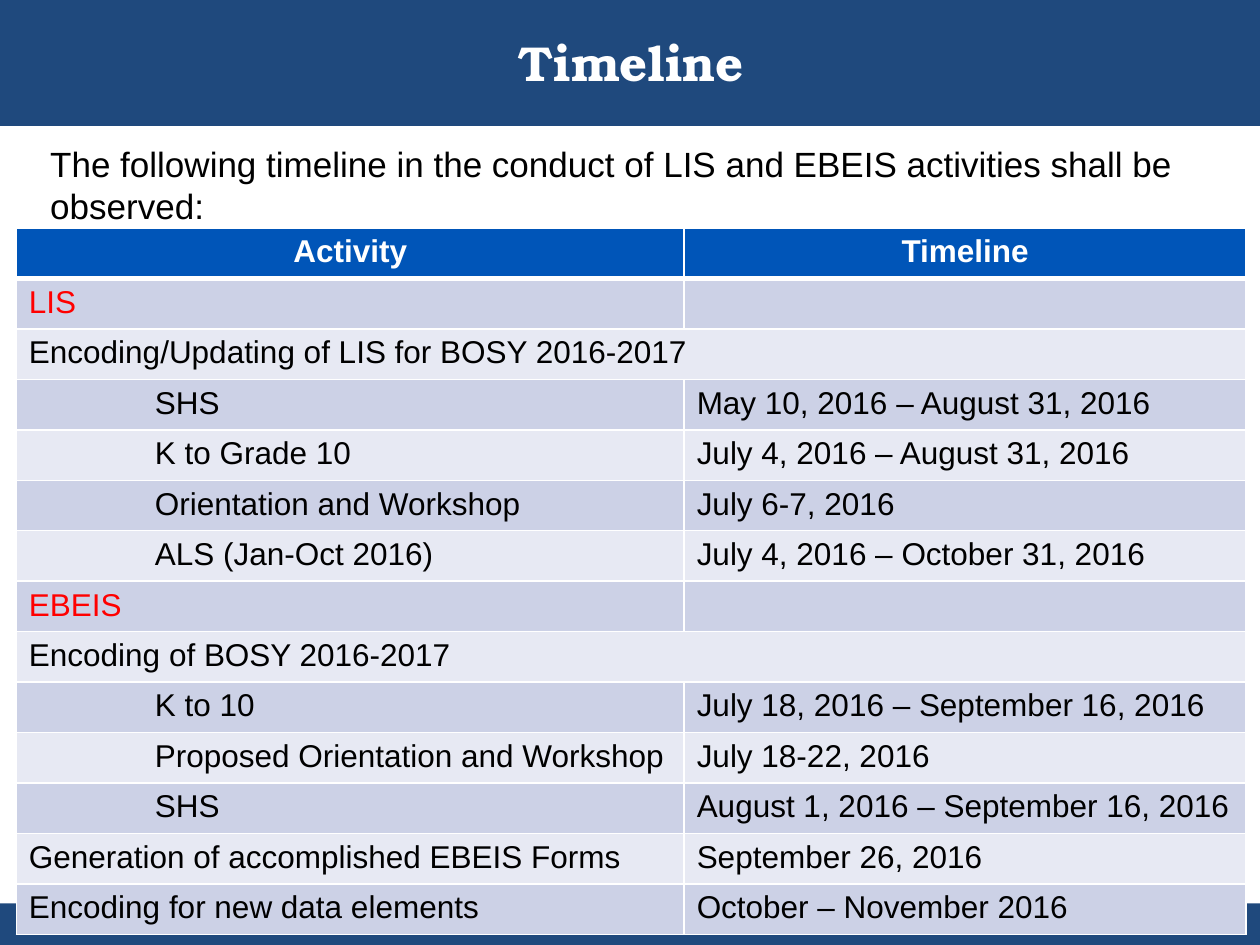
from lxml import etree
from pptx import Presentation
from pptx.dml.color import RGBColor
from pptx.enum.shapes import MSO_SHAPE
from pptx.enum.text import MSO_ANCHOR, PP_ALIGN
from pptx.oxml.ns import qn
from pptx.util import Inches, Pt

RECTANGLE = MSO_SHAPE.RECTANGLE
LEFT, CENTER = PP_ALIGN.LEFT, PP_ALIGN.CENTER
TOP, MIDDLE = MSO_ANCHOR.TOP, MSO_ANCHOR.MIDDLE

HEADERS = ("Activity", "Timeline")
SECTION, SPAN, ITEM, PLAIN = "section", "span", "item", "plain"
ROWS = [
    (SECTION, "LIS", ""),
    (SPAN, "Encoding/Updating of LIS for BOSY 2016-2017", ""),
    (ITEM, "SHS", "May 10, 2016 – August 31, 2016"),
    (ITEM, "K to Grade 10", "July 4, 2016 – August 31, 2016"),
    (ITEM, "Orientation and Workshop", "July 6-7, 2016"),
    (ITEM, "ALS (Jan-Oct 2016)", "July 4, 2016 – October 31, 2016"),
    (SECTION, "EBEIS", ""),
    (SPAN, "Encoding of BOSY 2016-2017", ""),
    (ITEM, "K to 10", "July 18, 2016 – September 16, 2016"),
    (ITEM, "Proposed Orientation and Workshop", "July 18-22, 2016"),
    (ITEM, "SHS", "August 1, 2016 – September 16, 2016"),
    (PLAIN, "Generation of accomplished EBEIS Forms", "September 26, 2016"),
    (PLAIN, "Encoding for new data elements", "October – November 2016"),
]


def color(value):
    return RGBColor.from_string(value)


def write_text(frame, text, size=18, font="Arial", ink="000000", bold=False,
               align=LEFT, indent=0):
    paragraph = frame.paragraphs[0]
    paragraph.alignment = align
    if indent:
        properties = paragraph._p.get_or_add_pPr()
        properties.set("marL", str(Inches(indent)))
        properties.set("indent", "0")
    run = paragraph.add_run()
    run.text = text
    run.font.size = Pt(size)
    run.font.name = font
    run.font.bold = bold
    run.font.color.rgb = color(ink)


class TimelineSlide:
    navy = "1F497D"
    header = "0055B8"
    bands = ("CCD1E6", "E7E9F3")
    white = "FFFFFF"
    red = "FF0000"
    black = "000000"
    title_font = "TeX Gyre Bonum"

    def __init__(self, slide):
        self.slide = slide

    def bar(self, top, height):
        shape = self.slide.shapes.add_shape(
            RECTANGLE, Inches(0), Inches(top), Inches(10), Inches(height))
        shape.shadow.inherit = False
        shape.fill.solid()
        shape.fill.fore_color.rgb = color(self.navy)
        shape.line.fill.background()

    def text(self, text, left, top, width, height, anchor=TOP, **style):
        box = self.slide.shapes.add_textbox(
            Inches(left), Inches(top), Inches(width), Inches(height))
        box.text_frame.word_wrap = True
        box.text_frame.vertical_anchor = anchor
        write_text(box.text_frame, text, **style)

    def border(self, cell, side, width):
        line = etree.SubElement(cell._tc.get_or_add_tcPr(), qn(f"a:ln{side}"),
                                w=str(Pt(width)))
        fill = etree.SubElement(line, qn("a:solidFill"))
        etree.SubElement(fill, qn("a:srgbClr"), val=self.white)

    def cell(self, cell, text, fill, top=1, bottom=1, **style):
        for side, width in (("L", 1), ("R", 1), ("T", top), ("B", bottom)):
            self.border(cell, side, width)
        cell.fill.solid()
        cell.fill.fore_color.rgb = color(fill)
        if text:
            write_text(cell.text_frame, text, **style)

    def table(self, left, top, widths, row_height):
        row_count = len(ROWS) + 1
        table = self.slide.shapes.add_table(
            row_count, len(widths), Inches(left), Inches(top),
            Inches(sum(widths)), Inches(row_height * row_count)).table
        for column, width in zip(table.columns, widths):
            column.width = Inches(width)
        for row in table.rows:
            row.height = Inches(row_height)
        for index, heading in enumerate(HEADERS):
            self.cell(table.cell(0, index), heading, self.header, bottom=3,
                      ink=self.white, bold=True, align=CENTER)
        for number, (kind, activity, dates) in enumerate(ROWS, 1):
            fill = self.bands[(number - 1) % 2]
            top_line = 3 if number == 1 else 1
            first, second = table.cell(number, 0), table.cell(number, 1)
            if kind == SPAN:
                first.merge(second)
            self.cell(first, activity, fill, top=top_line,
                      ink=self.red if kind == SECTION else self.black,
                      indent=1 if kind == ITEM else 0)
            self.cell(second, dates, fill, top=top_line)


def main():
    presentation = Presentation()
    presentation.slide_width = Inches(10)
    presentation.slide_height = Inches(7.5)
    page = TimelineSlide(
        presentation.slides.add_slide(presentation.slide_layouts[6]))
    page.bar(7.17, 0.33)
    page.bar(0, 1)
    page.text("Timeline", 0.13, 0.21, 9.76, 0.57, anchor=MIDDLE, size=28,
              font=page.title_font, ink=page.white, bold=True, align=CENTER)
    page.text("The following timeline in the conduct of LIS and EBEIS "
              "activities shall be observed:", 0.3, 1.08, 9.33, 0.77, size=20)
    page.table(0.13, 1.81, (5.3, 4.46), 0.4)
    presentation.save("out.pptx")


if __name__ == "__main__":
    main()
